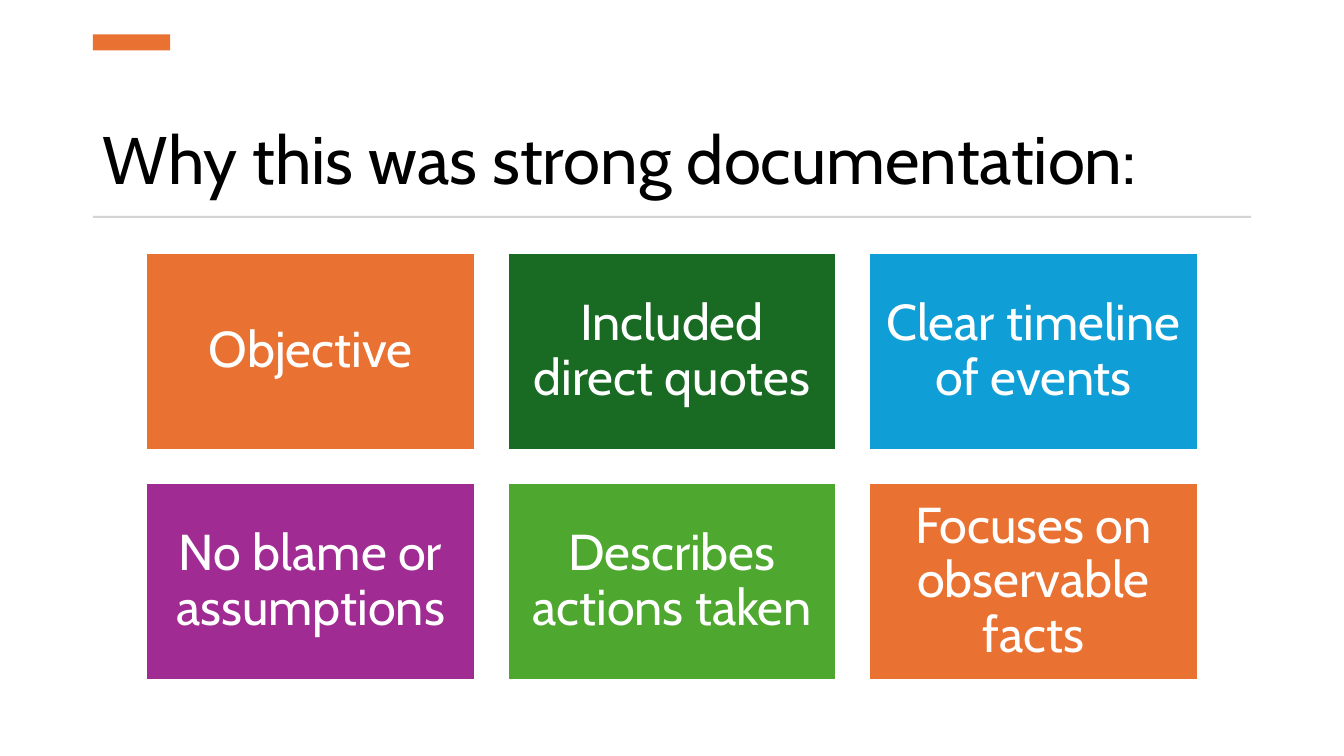
from dataclasses import dataclass

from pptx import Presentation
from pptx import util as u
from pptx.dml.color import RGBColor
from pptx.enum import shapes, text


@dataclass(frozen=True)
class Theme:
    font: str = "Cabin"
    title_size: int = 48
    tile_size: int = 36
    line_spacing: float = 0.9
    black: str = "000000"
    white: str = "FFFFFF"
    rule: str = "D5D5D5"
    orange: str = "E97132"
    forest: str = "196B24"
    blue: str = "0F9ED5"
    purple: str = "A02B93"
    green: str = "4EA72E"


class SlideBuilder:
    def __init__(self, page, theme):
        self.page = page
        self.theme = theme

    def label(self, shape, words, size, color, align, anchor, insets):
        frame = shape.text_frame
        frame.word_wrap = True
        frame.vertical_anchor = anchor
        side, edge = insets
        frame.margin_left = frame.margin_right = u.Pt(side)
        frame.margin_top = frame.margin_bottom = u.Pt(edge)
        para = frame.paragraphs[0]
        para.alignment = align
        para.line_spacing = self.theme.line_spacing
        span = para.add_run()
        span.text = words
        span.font.name = self.theme.font
        span.font.size = u.Pt(size)
        span.font.color.rgb = RGBColor.from_string(color)

    def title(self, words, left, top, width, height):
        box = self.page.shapes.add_textbox(
            u.Pt(left), u.Pt(top), u.Pt(width), u.Pt(height))
        self.label(box, words, self.theme.title_size, self.theme.black,
                   text.PP_ALIGN.LEFT, text.MSO_ANCHOR.BOTTOM, (7.2, 3.6))

    def bar(self, color, left, top, width, height):
        bar = self.page.shapes.add_shape(
            shapes.MSO_SHAPE.RECTANGLE,
            u.Pt(left), u.Pt(top), u.Pt(width), u.Pt(height))
        bar.shadow.inherit = False
        bar.fill.solid()
        bar.fill.fore_color.rgb = RGBColor.from_string(color)
        bar.line.fill.background()
        return bar

    def tile(self, words, color, left, top, width, height):
        tile = self.bar(color, left, top, width, height)
        tile.line.color.rgb = RGBColor.from_string(self.theme.white)
        tile.line.width = u.Pt(1.5)
        self.label(tile, words, self.theme.tile_size, self.theme.white,
                   text.PP_ALIGN.CENTER, text.MSO_ANCHOR.MIDDLE, (10.8, 10.8))


def main():
    deck = Presentation()
    deck.slide_width, deck.slide_height = u.Pt(960), u.Pt(540)
    page = deck.slides.add_slide(deck.slide_layouts[6])
    theme = Theme()
    builder = SlideBuilder(page, theme)

    # Heading with accent bar and rule
    margin, content_width = 66.4, 827.3
    builder.title("Why this was strong documentation:",
                  margin, 54, content_width, 91.4)
    builder.bar(theme.orange, margin, 24.6, 55.2, 11.5)
    builder.bar(theme.rule, margin, 154.2, content_width, 1.4)

    # Grid of reasons, three to a row
    reasons = [
        ("Objective", theme.orange),
        ("Included direct quotes", theme.forest),
        ("Clear timeline of events", theme.blue),
        ("No blame or assumptions", theme.purple),
        ("Describes actions taken", theme.green),
        ("Focuses on observable facts", theme.orange),
    ]
    columns, grid_left, grid_top = 3, 104.4, 180.7
    width, height, gap = 234.8, 140.9, 23.4
    for index, (words, color) in enumerate(reasons):
        row, column = divmod(index, columns)
        builder.tile(words, color,
                     grid_left + column * (width + gap),
                     grid_top + row * (height + gap), width, height)

    deck.save("out.pptx")


if __name__ == "__main__":
    main()
